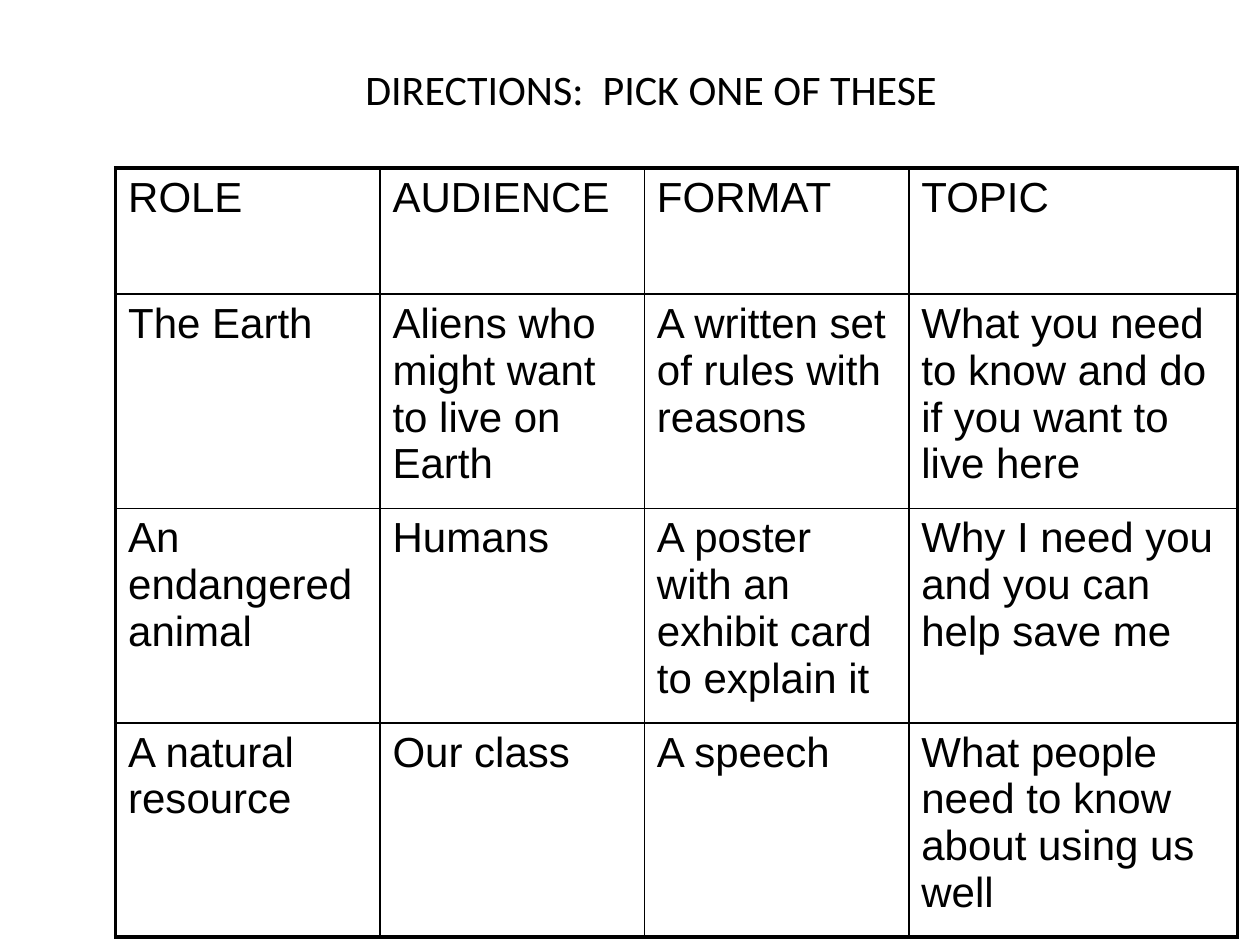
from lxml import etree
from pptx import Presentation
from pptx import util as u
from pptx.dml.color import RGBColor
from pptx.enum import text
from pptx.oxml.ns import qn

BLACK = RGBColor(0, 0, 0)
THIN, THICK = u.Pt(1), u.Pt(2.25)
COLUMNS = [5.33, 5.33, 5.33, 6.63]
ROWS = [2.54, 4.32, 4.32, 4.32]
CHOICES = [
    ["ROLE", "AUDIENCE", "FORMAT", "TOPIC"],
    ["The Earth", "Aliens who might want to live on Earth",
     "A written set of rules with reasons",
     "What you need to know and do if you want to live here"],
    ["An endangered animal", "Humans",
     "A poster with an exhibit card to explain it",
     "Why I need you and you can help save me"],
    ["A natural resource", "Our class", "A speech",
     "What people need to know about using us well"],
]


def write(tf, words, font, align):
    p = tf.paragraphs[0]
    p.alignment = align
    r = p.add_run()
    r.text = words
    for name, value in {"name": font, "size": u.Pt(24), "bold": False}.items():
        setattr(r.font, name, value)
    r.font.color.rgb = BLACK


def set_borders(cell, widths):
    """Draw the borders given as a dict of side letter (L, R, T, B) to width."""
    tcPr = cell._tc.get_or_add_tcPr()
    for i, (side, width) in enumerate(widths.items()):
        ln = etree.Element(qn("a:ln" + side), w=str(int(width)))
        fill = etree.SubElement(ln, qn("a:solidFill"))
        etree.SubElement(fill, qn("a:srgbClr"), val=str(BLACK))
        tcPr.insert(i, ln)


def add_title(s, left, top, width, height):
    tf = s.shapes.add_textbox(*map(u.Cm, (left, top, width, height))).text_frame
    tf.word_wrap = True
    tf.vertical_anchor = text.MSO_ANCHOR.MIDDLE
    write(tf, "DIRECTIONS:  PICK ONE OF THESE", "Calibri", text.PP_ALIGN.CENTER)


def add_choices(s, left, top):
    """Place the table, with a thick outer frame and thin inner lines."""
    box = (left, top, sum(COLUMNS), sum(ROWS))
    table = s.shapes.add_table(len(ROWS), len(COLUMNS), *map(u.Cm, box)).table
    table.first_row = table.horz_banding = False
    for column, width in zip(table.columns, COLUMNS):
        column.width = u.Cm(width)
    last_row, last_column = len(ROWS) - 1, len(COLUMNS) - 1
    for i, (height, choice) in enumerate(zip(ROWS, CHOICES)):
        table.rows[i].height = u.Cm(height)
        for j, words in enumerate(choice):
            cell = table.cell(i, j)
            cell.fill.background()
            write(cell.text_frame, words, "Arial", text.PP_ALIGN.LEFT)
            outer = {"L": j == 0, "R": j == last_column,
                     "T": i == 0, "B": i == last_row}
            set_borders(cell, {side: THICK if edge else THIN
                               for side, edge in outer.items()})


def main():
    prs = Presentation()
    prs.slide_width, prs.slide_height = u.Cm(25.4), u.Cm(19.05)
    s = prs.slides.add_slide(prs.slide_layouts[6])
    add_title(s, 2.12, 0.42, 22.01, 2.75)
    add_choices(s, 2.33, 3.39)
    prs.save("out.pptx")


if __name__ == "__main__":
    main()
